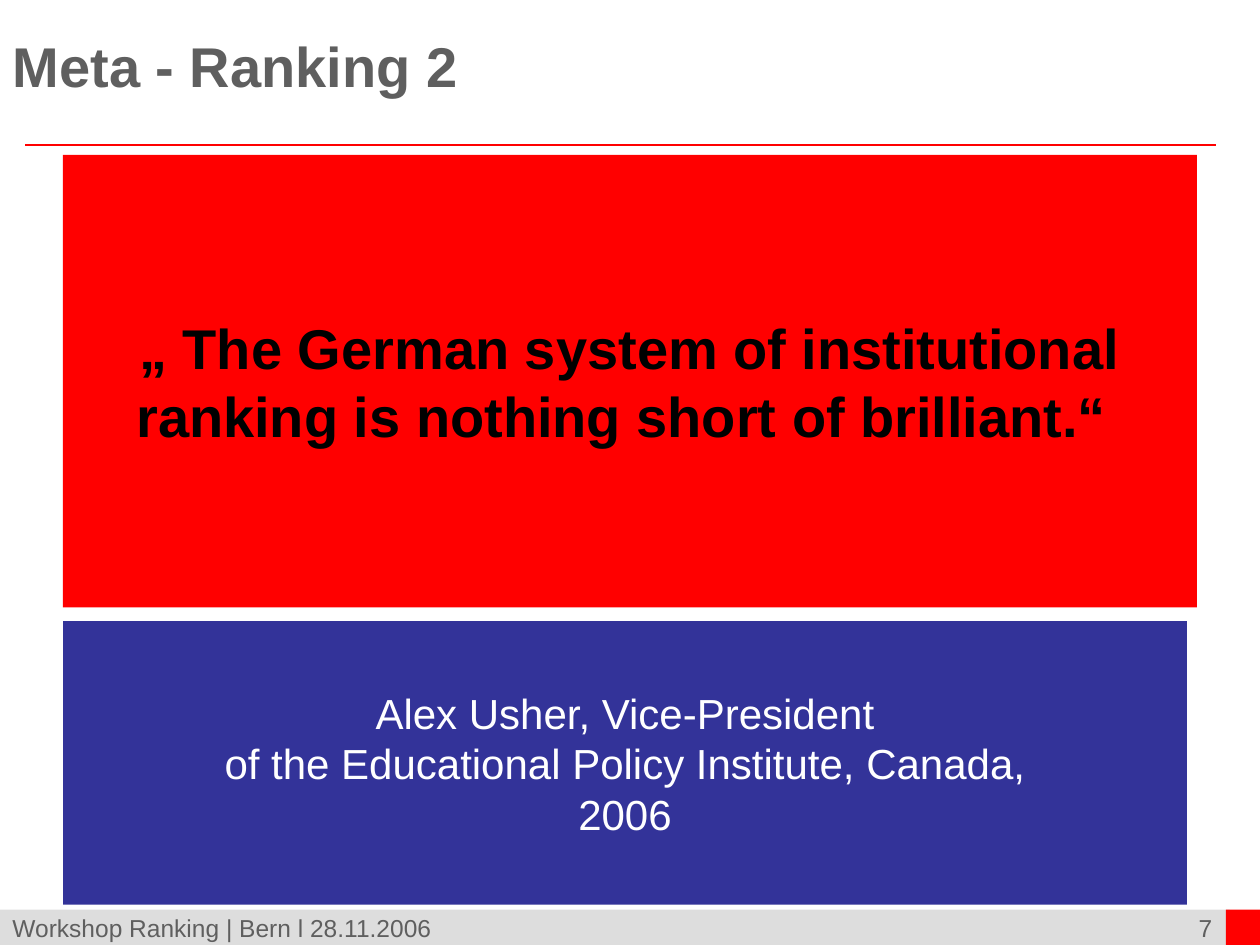
from lxml import etree
from pptx import Presentation
from pptx.dml.color import RGBColor
from pptx.enum import shapes, text
from pptx.oxml import ns
from pptx.util import Inches, Pt

RED = RGBColor(0xFF, 0x00, 0x00)
BLUE = RGBColor(0x33, 0x33, 0x99)
SILVER = RGBColor(0xDD, 0xDD, 0xDD)
GREY = RGBColor(0x5F, 0x5F, 0x5F)
BLACK = RGBColor(0x00, 0x00, 0x00)
WHITE = RGBColor(0xFF, 0xFF, 0xFF)

LEFT, CENTER, RIGHT = text.PP_ALIGN.LEFT, text.PP_ALIGN.CENTER, text.PP_ALIGN.RIGHT
TOP, MIDDLE = text.MSO_ANCHOR.TOP, text.MSO_ANCHOR.MIDDLE

TITLE = "Meta - Ranking 2"
TITLE_AREA = (0, 0.21, 7.32, 0.61)
RULE = (0.2, 1.15, 9.65, 1.15)
FOOTER_BARS = [
    ((0, 7.22, 9.76, 0.28), SILVER),
    ((9.73, 7.22, 0.27, 0.28), RED),
]
FOOTER_TEXTS = [
    ((8.7, 7.2, 1.02, 0.33), "7", RIGHT),
    ((0, 7.2, 8.62, 0.33), "Workshop Ranking | Bern l 28.11.2006", LEFT),
]
PANELS = [
    ((0.5, 1.23, 9, 3.59), RED,
     ["„ The German system of institutional ranking is nothing short of brilliant.“ "],
     {"size": Pt(32), "bold": True, "color": BLACK}),
    ((0.5, 4.93, 8.92, 2.25), BLUE,
     ["Alex Usher, Vice-President",
      "of the Educational Policy Institute, Canada,",
      "2006"],
     {"size": Pt(24), "bold": False, "color": WHITE}),
]


def inches(values):
    return [Inches(value) for value in values]


def write(box, lines, align, anchor, size, color, bold=False):
    frame = box.text_frame
    frame.word_wrap = True
    frame.vertical_anchor = anchor
    for index, line in enumerate(lines):
        para = frame.add_paragraph() if index else frame.paragraphs[0]
        para.alignment = align
        span = para.add_run()
        span.text = line
        for name, value in {"name": "Arial", "size": size, "bold": bold}.items():
            setattr(span.font, name, value)
        span.font.color.rgb = color


def add_panel(page, area, fill):
    panel = page.shapes.add_shape(shapes.MSO_SHAPE.RECTANGLE, *inches(area))
    panel.shadow.inherit = False
    panel.fill.solid()
    panel.fill.fore_color.rgb = fill
    panel.line.fill.background()
    return panel


def add_rule(page):
    rule = page.shapes.add_connector(shapes.MSO_CONNECTOR.STRAIGHT, *inches(RULE))
    rule.line.color.rgb = RED
    rule.line.width = Pt(0.75)
    etree.SubElement(rule._element.spPr, ns.qn("a:effectLst"))


def main():
    deck = Presentation()
    deck.slide_width, deck.slide_height = Inches(10), Inches(7.5)
    page = deck.slides.add_slide(deck.slide_layouts[5])

    title = page.shapes.title
    title.left, title.top, title.width, title.height = inches(TITLE_AREA)
    write(title, [TITLE], LEFT, MIDDLE, Pt(32), GREY, bold=True)

    for area, fill in FOOTER_BARS:
        add_panel(page, area, fill)
    add_rule(page)
    for area, line, align in FOOTER_TEXTS:
        write(page.shapes.add_textbox(*inches(area)), [line], align, TOP, Pt(14), GREY)
    for area, fill, lines, style in PANELS:
        write(add_panel(page, area, fill), lines, CENTER, MIDDLE, **style)

    deck.save("out.pptx")


if __name__ == "__main__":
    main()
